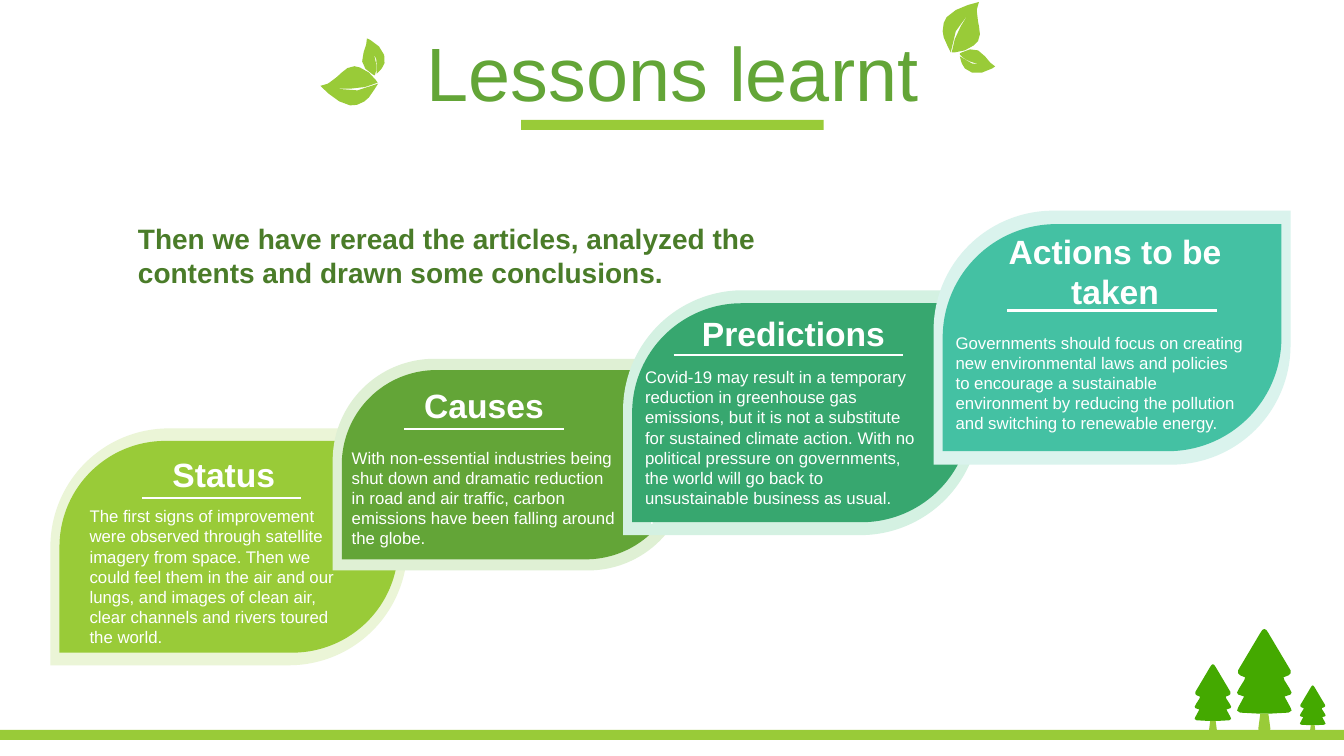
from dataclasses import dataclass
from math import cos, radians, sin

from lxml.etree import SubElement
from pptx import Presentation
from pptx.dml.color import RGBColor
from pptx.enum.shapes import MSO_CONNECTOR, MSO_SHAPE
from pptx.enum.text import MSO_ANCHOR, PP_ALIGN
from pptx.oxml.ns import qn
from pptx.util import Inches, Pt


@dataclass(frozen=True)
class Theme:
    font: str = "Arial"
    lime: str = "99CB38"
    green: str = "63A537"
    dark: str = "4A7C29"
    pine: str = "44A900"
    white: str = "FFFFFF"
    title: int = 54
    head: int = 24
    lead: int = 20
    body: int = 12
    rule: float = 1.5


class Page:
    def __init__(self, deck, theme):
        self.theme = theme
        self.slide = deck.slides.add_slide(deck.slide_layouts[5])
        self.shapes = self.slide.shapes

    def paint(self, shape, color):
        shape.shadow.inherit = False
        shape.fill.solid()
        shape.fill.fore_color.rgb = RGBColor.from_string(color)
        shape.line.fill.background()

    def block(self, kind, box, color):
        shape = self.shapes.add_shape(kind, *map(Inches, box))
        self.paint(shape, color)
        return shape

    def petal(self, box, color, bend=0.5):
        shape = self.block(MSO_SHAPE.ROUND_2_DIAG_RECTANGLE, box, color)
        shape.adjustments[0] = bend
        shape.adjustments[1] = 0

    def outline(self, points, color):
        spots = [(x * 1000, y * 1000) for x, y in points]
        form = self.shapes.build_freeform(*spots[0], scale=Inches(1) / 1000)
        form.add_line_segments(spots[1:], close=True)
        self.paint(form.convert_to_shape(), color)

    def sprig(self, left, top, turn):
        """Draw a pair of leaves from a shared stem, turned clockwise in degrees."""
        c, s = cos(radians(turn)), sin(radians(turn))
        for leaf in LEAVES:
            self.outline([(left + x * c - y * s, top + x * s + y * c)
                          for x, y in leaf], self.theme.lime)

    def tree(self, mid, top, scale):
        """Draw a tree by mirroring the right half of its crown and trunk."""
        for half, color in ((CROWN, self.theme.pine), (TRUNK, self.theme.lime)):
            whole = half + [(-x, y) for x, y in reversed(half)]
            self.outline([(mid + x * scale, top + y * scale) for x, y in whole], color)

    def rule(self, left, right, top):
        line = self.shapes.add_connector(
            MSO_CONNECTOR.STRAIGHT, *map(Inches, (left, top, right, top)))
        line.line.color.rgb = RGBColor.from_string(self.theme.white)
        line.line.width = Pt(self.theme.rule)
        SubElement(line._element.spPr, qn("a:effectLst"))

    def style(self, frame, size, color, bold=False, align=PP_ALIGN.LEFT):
        frame.word_wrap = True
        for para in frame.paragraphs:
            para.alignment = align
            for run in para.runs:
                run.font.name = self.theme.font
                run.font.size = Pt(size)
                run.font.bold = bold
                run.font.color.rgb = RGBColor.from_string(color)

    def title(self, text, box):
        shape = self.shapes.title
        shape.left, shape.top, shape.width, shape.height = map(Inches, box)
        frame = shape.text_frame
        frame.text = text
        frame.vertical_anchor = MSO_ANCHOR.MIDDLE
        frame.paragraphs[0].line_spacing = 0.9
        self.style(frame, self.theme.title, self.theme.green, align=PP_ALIGN.CENTER)

    def text(self, text, box, size, color, bold=False):
        frame = self.shapes.add_textbox(*map(Inches, box)).text_frame
        frame.text = text
        self.style(frame, size, color, bold)
        return frame

    def head(self, text, mid, top, width, height):
        box = (mid - width / 2, top, width, height)
        frame = self.text(text, box, self.theme.head, self.theme.white)
        frame.margin_left = frame.margin_right = 0
        frame.margin_top = frame.margin_bottom = 0
        frame.vertical_anchor = MSO_ANCHOR.MIDDLE
        self.style(frame, self.theme.head, self.theme.white, True, PP_ALIGN.CENTER)


@dataclass(frozen=True)
class Card:
    box: tuple
    bend: float
    rim: str
    fill: str
    name: str
    head: tuple
    rule: tuple
    body: tuple
    text: str


LEAVES = [
    [(0, 0), (.05, -.21), (.18, -.39), (.1, -.26), (.04, -.13), (.01, 0),
     (.04, 0), (.14, -.02), (.23, -.07), (.27, -.11), (.29, -.18), (.28, -.26),
     (.27, -.31), (.26, -.4), (.26, -.43), (.28, -.5), (.17, -.47), (.05, -.42),
     (-.04, -.35), (-.07, -.29), (-.08, -.21), (-.07, -.15), (-.03, -.06)],
    [(.35, .13), (.21, .11), (.09, .04), (.1, .08), (.11, .11), (.14, .16),
     (.21, .2), (.27, .2), (.31, .2), (.36, .18), (.41, .16), (.44, .14),
     (.39, .1), (.34, .04), (.27, -.02), (.19, -.03), (.11, 0), (.09, .01),
     (.09, .02), (.12, .05), (.15, .07), (.19, .09), (.28, .12)],
]
CROWN = [(0, 0), (.02, .01), (.04, .04), (.26, .41), (.26, .44), (.24, .46),
         (.19, .48), (.2, .51), (.25, .59), (.27, .63), (.26, .65), (.2, .67),
         (.26, .78), (.27, .81), (.24, .83), (.05, .84)]
TRUNK = [(.04, .84), (.06, .99), (.05, 1.03), (.01, 1.05)]
CARDS = [
    Card((.5, 4.25, 3.54, 2.35), .5, "EBF5D7", "99CB38", "Status",
         (2.22, 4.48, 1.2, .45), (1.41, 2.99, 4.94), (.79, 4.97, 2.83, 1.72),
         "The first signs of improvement were observed through satellite imagery "
         "from space. Then we could feel them in the air and our lungs, and images "
         "of clean air, clear channels and rivers toured the world."),
    Card((3.3, 3.56, 3.54, 2.1), .48, "DFF0D4", "63A537", "Causes",
         (4.8, 3.79, 1.35, .45), (4.01, 5.59, 4.26), (3.39, 4.39, 2.83, 1.11),
         "With non-essential industries being shut down and dramatic reduction in "
         "road and air traffic, carbon emissions have been falling around the globe."),
    Card((6.18, 2.88, 3.54, 2.43), .49, "D4F1E2", "37A76F", "Predictions",
         (7.87, 3.08, 1.91, .45), (6.68, 8.96, 3.52), (6.3, 3.59, 2.94, 1.72),
         "Covid-19 may result in a temporary reduction in greenhouse gas emissions, "
         "but it is not a substitute for sustained climate action. With no political "
         "pressure on governments, the world will go back to unsustainable business "
         "as usual.\n ."),
    Card((9.26, 2.09, 3.54, 2.52), .47, "DAF3ED", "44C1A3", "Actions to be taken",
         (11.06, 2.29, 2.4, .8), (9.99, 12.07, 3.08), (9.38, 3.25, 3.07, 1.11),
         "Governments should focus on creating new environmental laws and policies "
         "to encourage a sustainable environment by reducing the pollution and "
         "switching to renewable energy."),
]


def main():
    deck = Presentation()
    deck.slide_width, deck.slide_height = Inches(13.33), Inches(7.5)
    theme = Theme()
    page = Page(deck, theme)
    page.title("Lessons learnt", (.34, .37, 12.66, .79))
    for mid, top, scale in ((12.54, 6.24, 1), (13.02, 6.8, .47), (12.03, 6.59, .67)):
        page.tree(mid, top, scale)
    page.sprig(9.43, .52, 0)
    page.sprig(3.75, .83, 238.6)
    for bar in ((5.17, 1.19, 3, .1), (0, 7.24, 13.33, .1)):
        page.block(MSO_SHAPE.RECTANGLE, bar, theme.lime)
    for card in CARDS:
        left, top, width, height = card.box
        inset = .053 * height
        page.petal(card.box, card.rim, card.bend)
        page.petal((left + .09, top + inset, width - .18, height - 2 * inset), card.fill)
    for card in CARDS:
        page.head(card.name, *card.head)
        page.text(card.text, card.body, theme.body, theme.white)
        page.rule(*card.rule)
    page.text("Then we have reread the articles, analyzed the contents and drawn "
              "some conclusions.", (1.27, 2.15, 6.46, .74), theme.lead, theme.dark, True)
    deck.save("out.pptx")


if __name__ == "__main__":
    main()
